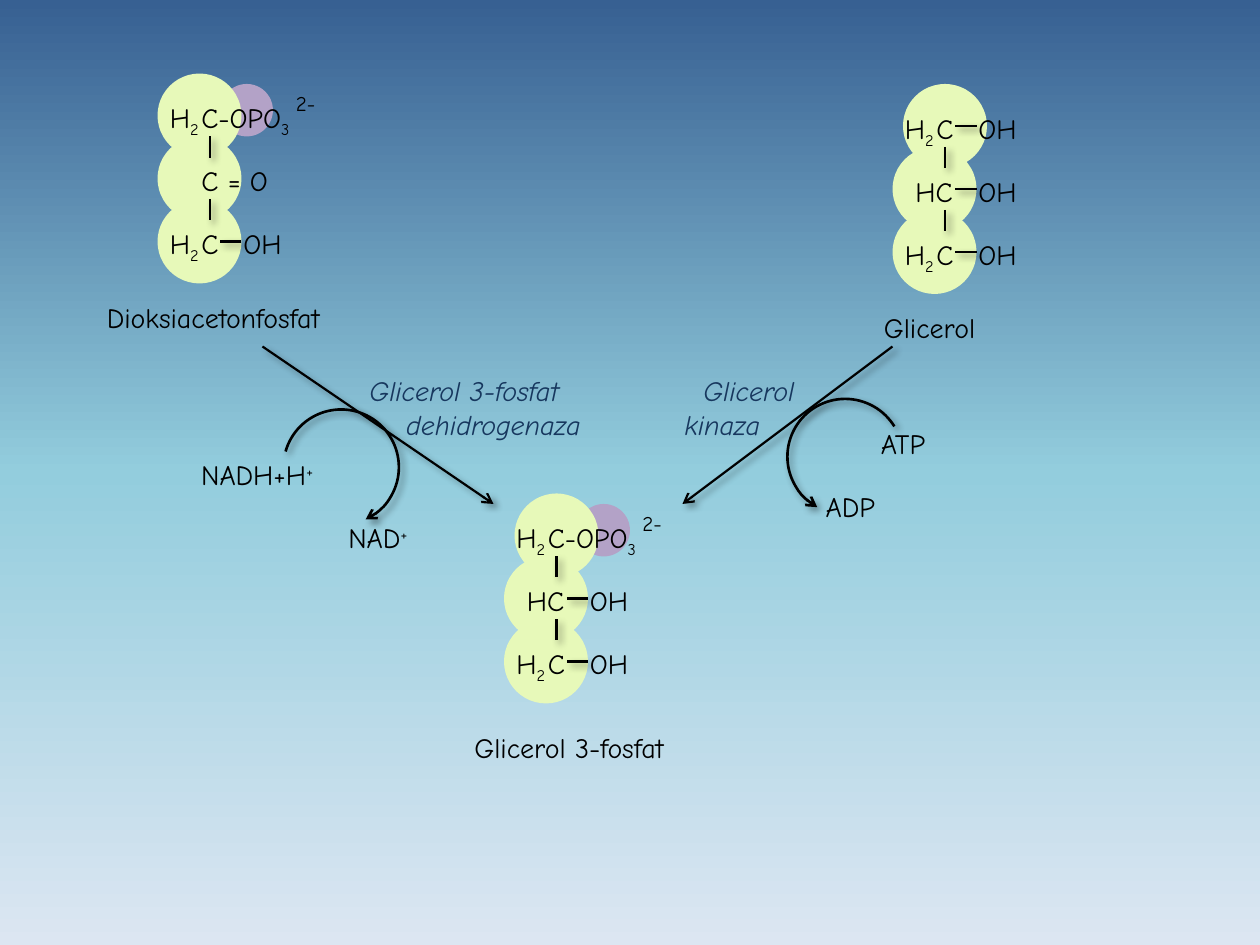
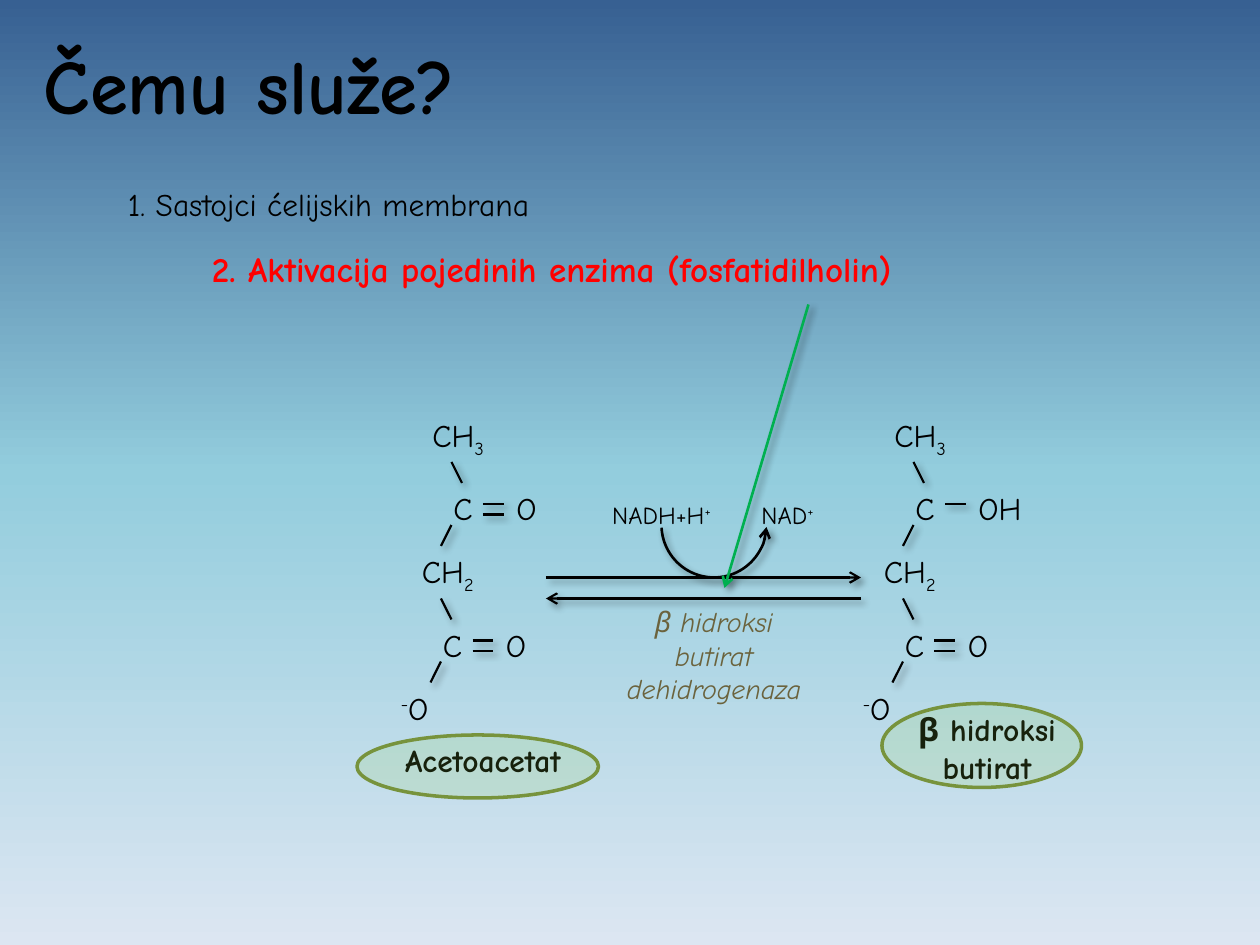
from lxml.etree import SubElement as Sub
from pptx import Presentation
from pptx.dml.color import RGBColor as Rgb
from pptx.enum.shapes import MSO_CONNECTOR as Link, MSO_SHAPE as Kind
from pptx.enum.text import MSO_AUTO_SIZE as Auto, PP_ALIGN as Align
from pptx.oxml.ns import qn
from pptx.util import Cm, Pt

FONT = "Comic Neue"
HUES = {
    "ink": "000000", "enzyme": "17375E", "olive": "6B633D", "red": "FF0000",
    "green": "00B050", "carbon": "E7F9B9", "phosphate": "B3A2C7",
    "tint": "92D050", "rim": "77933C",
}
SKY = {0: "376092", 50: "93CDDD", 100: "DCE6F2"}
SHIFT = {"_": "-25000", "^": "30000"}
# Left offset and width of each label in a carbon chain
SPOTS = {
    "H|_2": (0, 5.5), "HC": (1, 6.1), "C": (3, 4.1), "C = O": (3, 9.1),
    "C-OPO|_3": (3, 12), "OH": (7, 6.6),
}


def grid(n):
    """Length of n grid steps, 120 of which span the slide."""
    return Cm(n * 25.4 / 120)


def hue(name):
    return Rgb.from_string(HUES[name])


def write(pen, text, x, y, w, h, size=16, color="ink", bold=False,
          italic=False, center=False, fit=False, indents=()):
    """Text box; '|' parts a line, and a part led by _ or ^ is lowered or raised."""
    box = pen.add_textbox(grid(x), grid(y), grid(w), grid(h))
    frame = box.text_frame
    frame.word_wrap = not fit
    frame.auto_size = Auto.SHAPE_TO_FIT_TEXT if fit else Auto.NONE
    for i, line in enumerate(text.split("\n")):
        para = frame.paragraphs[0] if i == 0 else frame.add_paragraph()
        para.alignment = Align.CENTER if center else Align.LEFT
        if indents:
            para._p.get_or_add_pPr().set("marL", str(grid(indents[i])))
        for part in line.split("|"):
            run = para.add_run()
            run.text = part.lstrip("_^")
            font = run.font
            font.name, font.size = FONT, Pt(size)
            font.bold, font.italic = bold, italic
            font.color.rgb = hue(color)
            if part[0] in SHIFT:
                run._r.get_or_add_rPr().set("baseline", SHIFT[part[0]])


def stroke(item, color, width, tip=None):
    """Line with a soft shadow; tip is 'head' or 'tail' for an arrow there."""
    item.line.color.rgb = hue(color)
    item.line.width = Pt(width)
    if tip:
        Sub(item.line._get_or_add_ln(), qn(f"a:{tip}End"), type="arrow")
    props = item._element.spPr
    for old in props.findall(qn("a:effectLst")):
        props.remove(old)
    cast = Sub(Sub(props, qn("a:effectLst")), qn("a:outerShdw"),
               blurRad=str(Pt(4)), dist=str(Pt(3)), dir="2700000",
               algn="tl", rotWithShape="0")
    Sub(Sub(cast, qn("a:srgbClr"), val=HUES["ink"]), qn("a:alpha"), val="40000")


def line(pen, x1, y1, x2, y2, color="ink", width=1.25, tip=None):
    ends = [grid(n) for n in (x1, y1, x2, y2)]
    stroke(pen.add_connector(Link.STRAIGHT, *ends), color, width, tip)


def arc(pen, x, y, size, start, end, tip):
    """Part of a circle, clockwise between two angles in degrees."""
    bow = pen.add_shape(Kind.ARC, grid(x), grid(y), grid(size), grid(size))
    bow.adjustments[0] = start * 0.6
    bow.adjustments[1] = end * 0.6
    bow.fill.background()
    stroke(bow, "ink", 1.5, tip)


def disc(pen, x, y, w, h, color):
    oval = pen.add_shape(Kind.OVAL, grid(x), grid(y), grid(w), grid(h))
    oval.shadow.inherit = False
    oval.fill.solid()
    oval.fill.fore_color.rgb = hue(color)
    oval.line.fill.background()
    return oval


def ring(pen, x, y, w, h):
    """Translucent oval that marks a product name."""
    oval = disc(pen, x, y, w, h, "tint")
    tint = oval._element.spPr.find(qn("a:solidFill"))[0]
    Sub(tint, qn("a:alpha"), val="16000")
    oval.line.color.rgb = hue("rim")
    oval.line.width = Pt(2)


def chain(slide, x, y, rows, name, place, lean=0, bulb=None):
    """Three-carbon molecule; lean shifts the top disc, bulb places the phosphate."""
    pen = slide.shapes.add_group_shape().shapes
    if bulb:
        disc(pen, x + bulb, y + 1, 5, 5, "phosphate")
    for i in range(3):
        disc(pen, x + (0 if i else lean), y + 6 * i, 8, 8, "carbon")
    for i, row in enumerate(rows):
        top = y + 2 + 6 * i
        if i:
            line(pen, x + 5, top - 2, x + 5, top, width=1.5)
        for label in row:
            left, wide = SPOTS[label]
            write(pen, label, x + left, top, wide, 4.4, fit=True)
        if "OH" in row:
            line(pen, x + 8, top + 2, x + 6, top + 2, width=1.5)
    if bulb:
        write(pen, "2-", x + 12, y + 1, 4.6, 3.6, size=12, fit=True)
    left, top, wide = place
    write(pen, name, x + left, y + top, wide, 4.4, fit=True)


def acid(slide, x, y, group, wide, bonds):
    """Four-carbon acid whose second carbon holds the given group."""
    pen = slide.shapes.add_group_shape().shapes
    for label, left, top, w in (("CH|_3", 3, 0, 8), ("CH|_2", 2, 13, 8),
                                ("^-|O", 0, 26, 6)):
        write(pen, label, x + left, y + top, w, 4.8, size=18)
    for label, left, top, w in (("C", 5, 7, 4.2), (group, 11, 7, wide),
                                ("C", 4, 20, 4.2), ("O", 10, 20, 4.8)):
        write(pen, label, x + left, y + top, w, 4.8, size=18, fit=True)
    for x1, y1, x2 in ((7, 7, 6), (5, 13, 6), (6, 20, 5), (4, 26, 5)):
        line(pen, x + x1, y + y1, x + x2, y + y1 - 2)
    for left, top, count in ((9, 9, bonds), (8, 22, 2)):
        for i in range(count):
            line(pen, x + left, y + top + i, x + left + 2, y + top + i)


def reduction(slide, x, y):
    """Path from the ketone, with its cofactor and enzyme."""
    pen = slide.shapes
    line(pen, x + 8, y, x + 30, y + 15, tip="tail")
    arc(pen, x + 10, y + 6, 11, 195.8, 64.94, "tail")
    write(pen, "NADH+H|^+", x, y + 10, 15, 5, center=True)
    write(pen, "NAD|^+", x + 13, y + 16, 12, 5, center=True)
    write(pen, "Glicerol 3-fosfat\ndehidrogenaza", x + 17, y + 2, 23.8, 7.7,
          color="enzyme", italic=True, indents=(0, 3.5))


def kinase(slide, x, y):
    """Path from glycerol, with its cofactor and enzyme."""
    pen = slide.shapes
    line(pen, x + 21, y, x + 1, y + 15, tip="tail")
    arc(pen, x + 11, y + 5, 11, 118.94, 328.4, "head")
    write(pen, "ADP", x + 13, y + 13, 8, 5, center=True)
    write(pen, "ATP", x + 18, y + 7, 8, 5, center=True)
    write(pen, "Glicerol\nkinaza", x, y + 2, 14.4, 7.7,
          color="enzyme", italic=True, indents=(1.8, 0))


def balance(slide, x, y):
    """Two-way reaction with its cofactor and enzyme."""
    pen = slide.shapes
    line(pen, x, y + 10, x + 30, y + 10, tip="tail")
    line(pen, x, y + 12, x + 30, y + 12, tip="head")
    arc(pen, x + 11, y, 10, 2.24, 177.02, "head")
    for label, left in (("NADH+H|^+", 3), ("NAD|^+", 15)):
        write(pen, label, x + left, y + 2, 16, 5, size=14, center=True)
    write(pen, "β hidroksi\nbutirat\ndehidrogenaza", x + 5, y + 12, 22, 12,
          color="olive", italic=True, center=True)


def heading(slide, x, y):
    pen = slide.shapes
    write(pen, "1. Sastojci ćelijskih membrana", x + 8, y + 14, 45.1, 4.8,
          size=18, fit=True)
    write(pen, "2. Aktivacija pojedinih enzima (fosfatidilholin)",
          x + 16, y + 20, 78.1, 5.3, size=20, color="red", bold=True, fit=True)
    write(pen, "Čemu služe?", x, y, 45.7, 10.1, size=44, bold=True, fit=True)


def blank(deck):
    """New slide with the shared sky gradient."""
    slide = deck.slides.add_slide(deck.slide_layouts[6])
    fill = slide.background.fill
    fill.gradient()
    fill.gradient_angle = 270
    stops = slide.element.find(".//" + qn("a:gsLst"))
    stops.clear()
    for place, color in SKY.items():
        stop = Sub(stops, qn("a:gs"), pos=str(place * 1000))
        Sub(stop, qn("a:srgbClr"), val=color)
    return slide


def origins(deck):
    """Both sources of glycerol 3-phosphate."""
    slide = blank(deck)
    top, low, mid = ("H|_2", "C-OPO|_3"), ("H|_2", "C", "OH"), ("HC", "OH")
    chain(slide, 48, 47, (top, mid, low), "Glicerol 3-fosfat",
          (-4, 22, 23.8), lean=1, bulb=7)
    chain(slide, 15, 7, (top, ("C = O",), low), "Dioksiacetonfosfat",
          (-6, 21, 26.4), bulb=6)
    chain(slide, 85, 8, (low, mid, low), "Glicerol", (-2, 21, 12.1), lean=1)
    reduction(slide, 17, 33)
    kinase(slide, 64, 33)


def roles(deck):
    """Enzyme activation by a phospholipid."""
    slide = blank(deck)
    pen = slide.shapes
    heading(slide, 3, 3)
    acid(slide, 37, 39, "O", 4.8, 2)
    acid(slide, 81, 39, "OH", 7.2, 1)
    write(pen, "Acetoacetat", 35, 70, 22, 5, size=18, bold=True, center=True)
    write(pen, "β hidroksi\nbutirat", 83, 67, 22, 8, size=18, bold=True,
          center=True)
    balance(slide, 52, 45)
    ring(pen, 34, 70, 23, 6)
    ring(pen, 84, 67, 19, 8)
    line(pen, 77, 29, 69, 56, color="green", width=1.5, tip="tail")


def main():
    deck = Presentation()
    deck.slide_width, deck.slide_height = Cm(25.4), Cm(19.05)
    origins(deck)
    roles(deck)
    deck.save("out.pptx")


if __name__ == "__main__":
    main()
